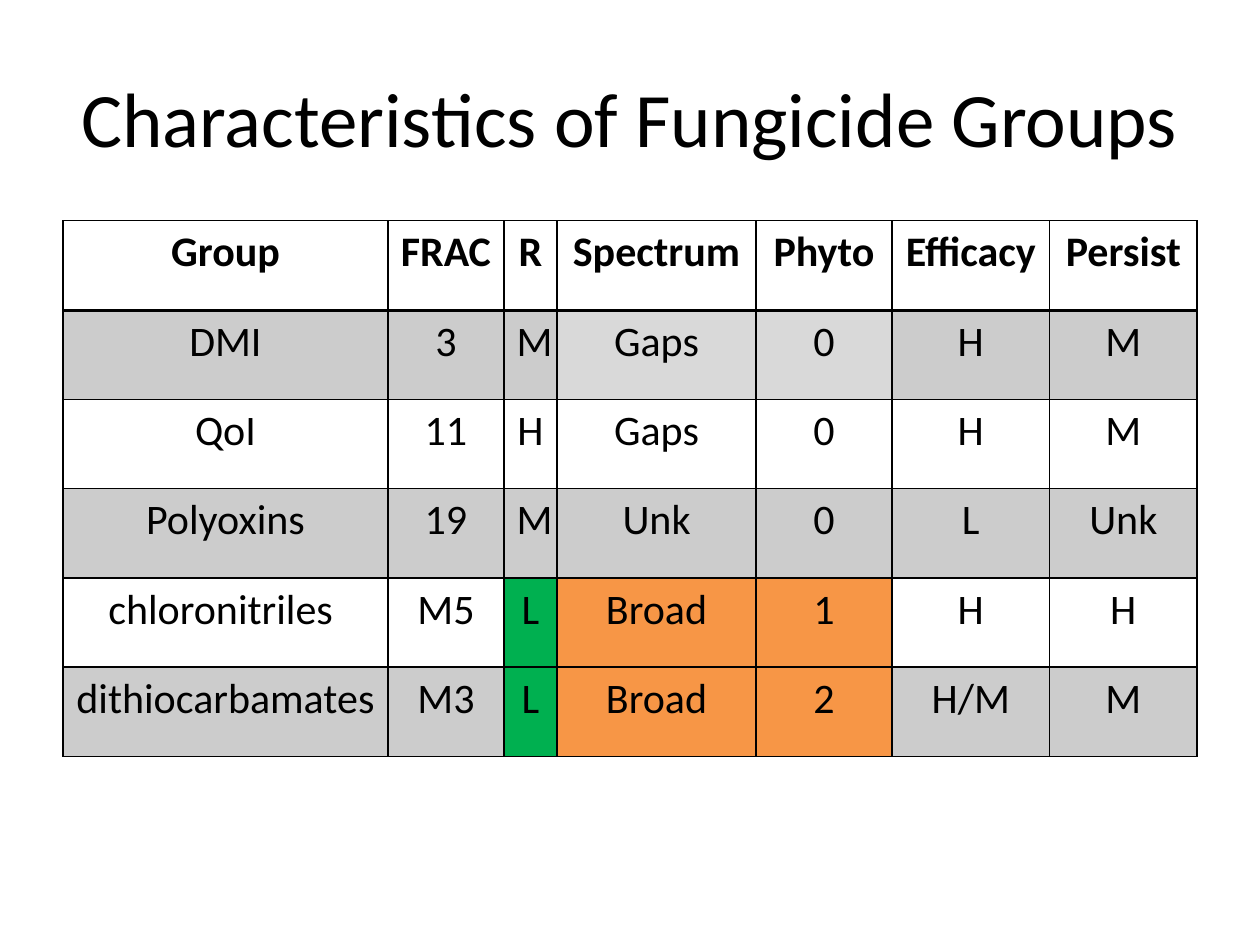
from pptx import Presentation
from pptx import util as u
from pptx.dml.color import RGBColor
from pptx.enum import text
from pptx.oxml.ns import qn
from lxml import etree

BLACK = RGBColor(0x00, 0x00, 0x00)
PALE = RGBColor(0xD9, 0xD9, 0xD9)
GREEN = RGBColor(0x00, 0xB0, 0x50)
ORANGE = RGBColor(0xF7, 0x96, 0x46)
BAND_ALPHA = 20  # percent opacity of the black banding

COL_WIDTHS = [6.55, 2.34, 1.07, 4.01, 2.74, 3.18, 2.97]
ROW_HEIGHT = 1.8
ROWS = [
    ["Group", "FRAC", "R", "Spectrum", "Phyto", "Efficacy", "Persist"],
    ["DMI", "3", "M", "Gaps", "0", "H", "M"],
    ["QoI", "11", "H", "Gaps", "0", "H", "M"],
    ["Polyoxins", "19", "M", "Unk", "0", "L", "Unk"],
    ["chloronitriles ", "M5", "L", "Broad", "1", "H", "H"],
    ["dithiocarbamates", "M3", "L", "Broad", "2", "H/M", "M"],
]
# Cells that stand out from the banding, by (row, column)
HIGHLIGHTS = {(1, 3): PALE, (1, 4): PALE}
for row in (4, 5):
    HIGHLIGHTS.update({(row, 2): GREEN, (row, 3): ORANGE, (row, 4): ORANGE})


class SlideBuilder:
    """Holds the text style and the current slide."""

    font = {"name": "Calibri", "size": u.Pt(24), "bold": False}

    def __init__(self, prs):
        self.s = prs.slides.add_slide(prs.slide_layouts[5])

    def add_text(self, tf, words, **changes):
        p = tf.paragraphs[0]
        p.alignment = text.PP_ALIGN.CENTER
        r = p.add_run()
        r.text = words
        for name, value in {**self.font, **changes}.items():
            setattr(r.font, name, value)
        r.font.color.rgb = BLACK

    def title(self, words, left, top, width, height):
        sp = self.s.shapes.title
        box = {"left": left, "top": top, "width": width, "height": height}
        for name, value in box.items():
            setattr(sp, name, u.Cm(value))
        sp.text_frame.vertical_anchor = text.MSO_ANCHOR.MIDDLE
        self.add_text(sp.text_frame, words, size=u.Pt(44))

    def borders(self, cell, **widths):
        tcPr = cell._tc.get_or_add_tcPr()
        for side in ("L", "R", "T", "B"):
            ln = etree.SubElement(tcPr, qn(f"a:ln{side}"),
                                  w=str(int(u.Pt(widths.get(side, 1)))))
            fill = etree.SubElement(ln, qn("a:solidFill"))
            etree.SubElement(fill, qn("a:srgbClr"), val=str(BLACK))

    def fill(self, cell, color, alpha=None):
        cell.fill.solid()
        cell.fill.fore_color.rgb = color
        if alpha is not None:
            clr = cell._tc.tcPr.find(f"{qn('a:solidFill')}/{qn('a:srgbClr')}")
            etree.SubElement(clr, qn("a:alpha"), val=str(alpha * 1000))

    def table(self, rows, col_widths, row_height, left, top):
        frame = self.s.shapes.add_table(
            len(rows), len(col_widths), u.Cm(left), u.Cm(top),
            u.Cm(sum(col_widths)), u.Cm(row_height * len(rows)))
        table = frame.table
        table.horz_banding = False
        for col, width in zip(table.columns, col_widths):
            col.width = u.Cm(width)
        for i, row in enumerate(rows):
            table.rows[i].height = u.Cm(row_height)
            for j, words in enumerate(row):
                cell = table.cell(i, j)
                self.add_text(cell.text_frame, words, bold=i == 0)
                # The rule under the header is heavier
                self.borders(cell, B=2 if i == 0 else 1, T=2 if i == 1 else 1)
                if (i, j) in HIGHLIGHTS:
                    self.fill(cell, HIGHLIGHTS[i, j])
                elif i % 2:
                    self.fill(cell, BLACK, BAND_ALPHA)
                else:
                    cell.fill.background()


def main():
    prs = Presentation()
    prs.slide_width, prs.slide_height = u.Cm(25.4), u.Cm(19.05)
    slide = SlideBuilder(prs)

    # Heading
    slide.title("Characteristics of Fungicide Groups", 1.27, 0.76, 22.86, 3.18)

    # Fungicide groups
    slide.table(ROWS, COL_WIDTHS, ROW_HEIGHT, 1.27, 4.45)

    prs.save("out.pptx")


if __name__ == "__main__":
    main()
